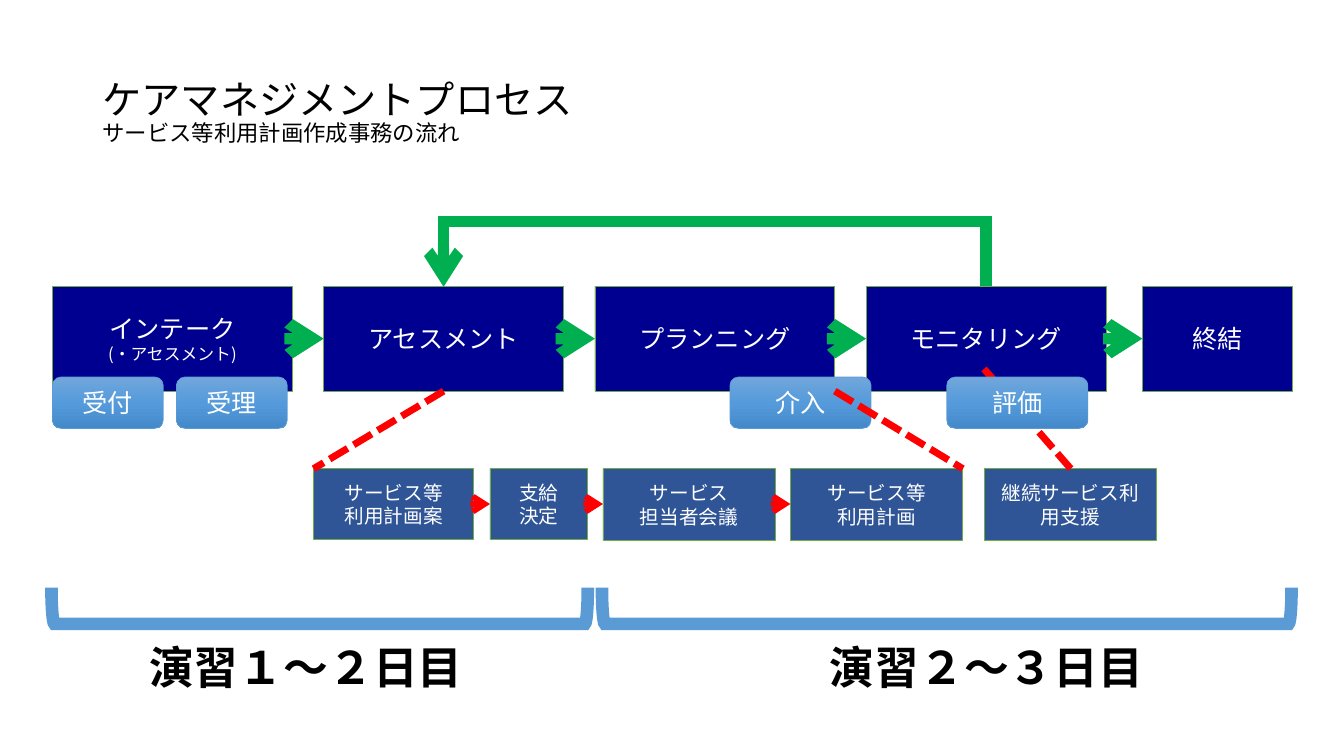
from copy import deepcopy

from lxml.etree import SubElement
from pptx import Presentation
from pptx.dml.color import RGBColor
from pptx.enum.dml import MSO_LINE
from pptx.enum.shapes import MSO_CONNECTOR, MSO_SHAPE
from pptx.enum.text import MSO_ANCHOR, PP_ALIGN
from pptx.oxml.ns import qn
from pptx.util import Inches, Pt

BLACK = RGBColor(0x00, 0x00, 0x00)
WHITE = RGBColor(0xFF, 0xFF, 0xFF)
NAVY = RGBColor(0x00, 0x00, 0x90)
BLUE = RGBColor(0x2F, 0x55, 0x97)
LIGHT_BLUE = RGBColor(0x5B, 0x9B, 0xD5)
PILL_BLUES = [RGBColor(0x71, 0xA6, 0xDB), RGBColor(0x55, 0x9B, 0xDB), RGBColor(0x44, 0x8A, 0xCA)]
OUTLINE_GREEN = RGBColor(0x70, 0xAD, 0x47)
GREEN = RGBColor(0x00, 0xB0, 0x50)
RED = RGBColor(0xFF, 0x00, 0x00)
JAPANESE_FONT = "Noto Sans CJK JP"


class ProcessSlide:
    def __init__(self, slide):
        self.slide = slide

    def write_run(self, paragraph, text, size, color, font=JAPANESE_FONT, bold=False):
        run = paragraph.add_run()
        run.text = text
        run.font.size = Pt(size)
        run.font.name = font
        run.font.bold = bold
        run.font.color.rgb = color
        SubElement(run.font._element, qn("a:ea"), typeface=JAPANESE_FONT)

    def text_box(self, left, top, width, height, anchor=MSO_ANCHOR.TOP):
        box = self.slide.shapes.add_textbox(Inches(left), Inches(top), Inches(width), Inches(height))
        box.text_frame.word_wrap = True
        box.text_frame.vertical_anchor = anchor
        return box.text_frame.paragraphs[0]

    def shape(self, kind, left, top, width, height, line_color, line_width):
        shape = self.slide.shapes.add_shape(
            kind, Inches(left), Inches(top), Inches(width), Inches(height))
        shape.shadow.inherit = False
        shape.line.color.rgb = line_color
        shape.line.width = Pt(line_width)
        return shape

    def label(self, shape, lines):
        frame = shape.text_frame
        frame.word_wrap = True
        frame.vertical_anchor = MSO_ANCHOR.MIDDLE
        for index, (text, size) in enumerate(lines):
            paragraph = frame.add_paragraph() if index else frame.paragraphs[0]
            paragraph.alignment = PP_ALIGN.CENTER
            self.write_run(paragraph, text, size, WHITE)

    def box(self, left, top, width, height, color, lines):
        shape = self.shape(MSO_SHAPE.RECTANGLE, left, top, width, height, OUTLINE_GREEN, 0.5)
        shape.fill.solid()
        shape.fill.fore_color.rgb = color
        self.label(shape, lines)

    def pill(self, left, width, text):
        shape = self.shape(
            MSO_SHAPE.ROUNDED_RECTANGLE, left, 3.74, width, 0.51, LIGHT_BLUE, 0.5)
        shape.fill.gradient()
        shape.fill.gradient_angle = 270
        stop_list = next(shape.element.iter(qn("a:gsLst")))
        stop_list.insert(1, deepcopy(stop_list[0]))
        for index, stop in enumerate(shape.fill.gradient_stops):
            stop.position = index / 2
            stop.color.rgb = PILL_BLUES[index]
        self.label(shape, [(text, 18)])

    def connector(self, start, end, color, width, kind=MSO_CONNECTOR.STRAIGHT,
                  arrow=False, dashed=False):
        points = [Inches(value) for value in (*start, *end)]
        connector = self.slide.shapes.add_connector(kind, *points)
        connector.line.color.rgb = color
        connector.line.width = Pt(width)
        if dashed:
            connector.line.dash_style = MSO_LINE.SQUARE_DOT
        outline = connector.line._get_or_add_ln()
        SubElement(outline, qn("a:miter"), lim="800000")
        if arrow:
            SubElement(outline, qn("a:tailEnd"), type="arrow")
        SubElement(connector.element.spPr, qn("a:effectLst"))
        return connector

    def return_arrow(self, start_x, end_x, bottom, rise):
        """Elbow arrow over the boxes: a rotated connector, bent outside its own frame."""
        middle, half, depth = (start_x + end_x) / 2, (start_x - end_x) / 2, 0.01
        connector = self.connector(
            (middle + depth / 2, bottom + half), (middle - depth / 2, bottom - half),
            GREEN, 8, MSO_CONNECTOR.ELBOW, arrow=True)
        properties = connector.element.spPr
        properties.find(qn("a:xfrm")).set("rot", str(270 * 60000))
        adjustments = next(properties.iter(qn("a:avLst")))
        SubElement(adjustments, qn("a:gd"), name="adj1",
                   fmla=f"val {round(-rise / depth * 100000)}")

    def bracket(self, left, top, width, height):
        """Right bracket turned a quarter so that it opens upwards."""
        shape = self.shape(
            MSO_SHAPE.RIGHT_BRACKET, left + (width - height) / 2, top + (height - width) / 2,
            height, width, LIGHT_BLUE, 9)
        shape.rotation = 90
        shape.fill.background()
        SubElement(shape.line._get_or_add_ln(), qn("a:miter"), lim="800000")


def main():
    presentation = Presentation()
    presentation.slide_width = Inches(13.33)
    presentation.slide_height = Inches(7.5)
    page = ProcessSlide(presentation.slides.add_slide(presentation.slide_layouts[6]))

    # Title
    title = page.text_box(0.92, 0.4, 11.5, 1.45, MSO_ANCHOR.MIDDLE)
    title.line_spacing = 0.9
    page.write_run(title, "ケアマネジメントプロセス", 28, BLACK)
    title.add_line_break()
    page.write_run(title, "サービス等利用計画作成事務の流れ", 16, BLACK)

    # Main stages
    stages = [
        (2.38, [("インテーク", 18), ("(・アセスメント)", 12)]),
        (2.38, [("アセスメント", 18)]),
        (2.38, [("プランニング", 18)]),
        (2.38, [("モニタリング", 18)]),
        (1.49, [("終結", 18)]),
    ]
    stage_lefts = [0.52, 3.21, 5.9, 8.59, 11.33]
    for left, (width, lines) in zip(stage_lefts, stages):
        page.box(left, 2.84, width, 1.04, NAVY, lines)

    # Arrows between stages, and the way back from monitoring to assessment
    for left, next_left in zip(stage_lefts, stage_lefts[1:]):
        page.connector((left + 2.38, 3.36), (next_left, 3.36), GREEN, 8, arrow=True)
    page.return_arrow(9.78, 4.4, 2.84, 0.65)

    # Service plan steps
    steps = [
        (3.11, 1.59, 0.7, ["サービス等", "利用計画案"]),
        (4.86, 0.97, 0.7, ["支給", "決定"]),
        (5.98, 1.71, 0.71, ["サービス", "担当者会議"]),
        (7.84, 1.71, 0.71, ["サービス等", "利用計画"]),
        (9.76, 1.71, 0.71, ["継続サービス利用支援"]),
    ]
    for left, width, height, lines in steps:
        page.box(left, 4.65, width, height, BLUE, [(line, 14) for line in lines])
    for (left, width, *_), (next_left, *_) in zip(steps[:3], steps[1:4]):
        page.connector((left + width, 5), (next_left, 5), RED, 4, arrow=True)

    # Activities and dashed links; the evaluation pill covers its link
    for left, width, text in [(0.52, 1.1, "受付"), (1.75, 1.1, "受理"), (7.24, 1.4, "介入")]:
        page.pill(left, width, text)
    for start, end_x in [((4.4, 3.88), 3.11), ((8.28, 3.88), 9.55), ((9.76, 3.66), 10.62)]:
        page.connector(start, (end_x, 4.65), RED, 5, dashed=True)
    page.pill(9.39, 1.4, "評価")

    # Training days
    for left, width, text_left, text_width, text in [
        (0.51, 5.32, 1.38, 4.53, "演習１～２日目"),
        (5.97, 6.84, 8.13, 3.34, "演習２～３日目"),
    ]:
        page.bracket(left, 5.83, width, 0.36)
        days = page.text_box(text_left, 6.3, text_width, 0.64)
        page.write_run(days, text, 32, BLACK, "Calibri", bold=True)

    presentation.save("out.pptx")


if __name__ == "__main__":
    main()
